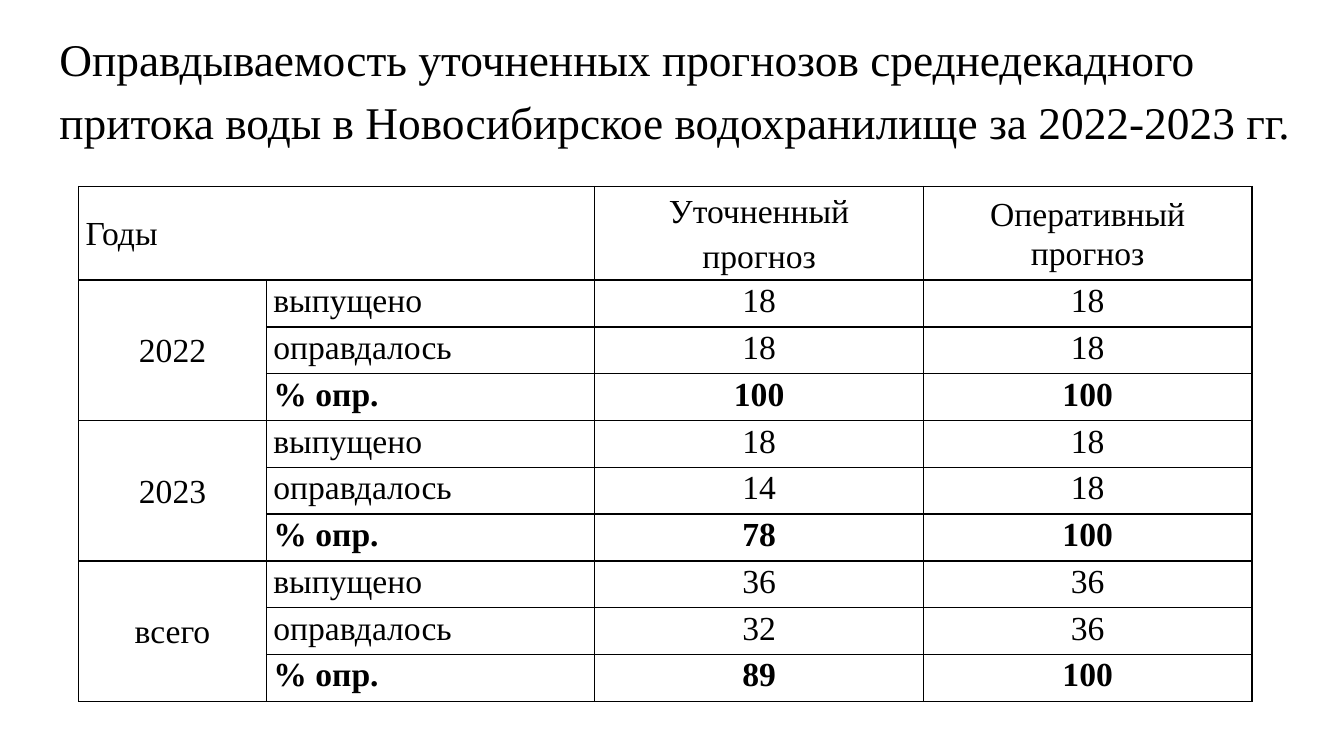
import dataclasses

import pptx
import pptx.dml.color
import pptx.enum.text
import pptx.oxml.ns
import pptx.util
from lxml import etree

ALIGN = pptx.enum.text.PP_ALIGN
ANCHOR = pptx.enum.text.MSO_ANCHOR
FONT = "Times New Roman"
BLACK = "000000"
WIDTH, HEIGHT = pptx.util.Inches(13.33), pptx.util.Inches(7.5)


@dataclasses.dataclass(frozen=True)
class Area:
    """A box in percent of the slide's size."""
    left: float
    top: float
    width: float
    height: float

    def emu(self) -> tuple[int, int, int, int]:
        return (int(WIDTH * self.left / 100), int(HEIGHT * self.top / 100),
                int(WIDTH * self.width / 100), int(HEIGHT * self.height / 100))


@dataclasses.dataclass(frozen=True)
class Period:
    """Issued and fulfilled forecasts with the success rate, per forecast kind."""
    name: str
    issued: tuple[int, int]
    fulfilled: tuple[int, int]
    percent: tuple[int, int]


TITLE = ("Оправдываемость уточненных прогнозов среднедекадного "
         "притока воды в Новосибирское водохранилище за 2022-2023 гг.")
TITLE_AREA = Area(3.68, 5.33, 95.42, 19.33)
TABLE_AREA = Area(5.85, 24.67, 87.3, 68.13)
COLUMN_SHARES = (0.16, 0.28, 0.28, 0.28)
HEADER_UNITS = 2
MEASURES = ("выпущено", "оправдалось", "% опр.")
PERIODS = (
    Period("2022", (18, 18), (18, 18), (100, 100)),
    Period("2023", (18, 18), (14, 18), (78, 100)),
    Period("всего", (36, 36), (32, 36), (89, 100)),
)
ROWS = 1 + len(PERIODS) * len(MEASURES)


def color(value: str) -> pptx.dml.color.RGBColor:
    return pptx.dml.color.RGBColor.from_string(value)


def style(p, size: float, spacing: float, align=ALIGN.LEFT, bold: bool = False) -> None:
    p.alignment = align
    p.line_spacing = spacing
    p.font.name = FONT
    p.font.size = pptx.util.Pt(size)
    p.font.bold = bold
    p.font.color.rgb = color(BLACK)


def border(cell, side: str, points: float) -> None:
    qn = pptx.oxml.ns.qn
    ln = etree.SubElement(cell._tc.get_or_add_tcPr(), qn(f"a:ln{side}"),
                          w=str(pptx.util.Pt(points)))
    fill = etree.SubElement(ln, qn("a:solidFill"))
    etree.SubElement(fill, qn("a:srgbClr"), val=BLACK)


def write(cell, text: str, align=ALIGN.CENTER, bold: bool = False, anchor=ANCHOR.TOP) -> None:
    cell.vertical_anchor = anchor
    cell.text = text
    for p in cell.text_frame.paragraphs:
        style(p, 24, 1.07, align, bold)
        p.space_before = p.space_after = pptx.util.Pt(2)


def add_title(s) -> None:
    tf = s.shapes.add_textbox(*TITLE_AREA.emu()).text_frame
    tf.word_wrap = True
    tf.vertical_anchor = ANCHOR.MIDDLE
    tf.margin_bottom = pptx.util.Inches(0.6)
    p = tf.paragraphs[0]
    p.text = TITLE
    style(p, 32.4, 1.15)


def format_grid(table) -> None:
    table.first_row = table.horz_banding = False
    _, _, width, height = TABLE_AREA.emu()
    unit = height / (ROWS - 1 + HEADER_UNITS)
    for column, share in zip(table.columns, COLUMN_SHARES):
        column.width = int(width * share)
    for i, row in enumerate(table.rows):
        row.height = int(unit * (1 if i else HEADER_UNITS))
        # Heavier rules separate the header and the periods
        top = 1.5 if i % len(MEASURES) == 1 else 1
        bottom = 1.5 if i % len(MEASURES) == 0 and i < ROWS - 1 else 1
        for cell in row.cells:
            cell.margin_left = cell.margin_right = pptx.util.Inches(0.07)
            cell.margin_top = cell.margin_bottom = 0
            for side, points in (("L", 1), ("R", 1), ("T", top), ("B", bottom)):
                border(cell, side, points)
            cell.fill.background()


def add_forecast_table(s) -> None:
    table = s.shapes.add_table(ROWS, len(COLUMN_SHARES), *TABLE_AREA.emu()).table
    format_grid(table)

    # Header
    table.cell(0, 0).merge(table.cell(0, 1))
    write(table.cell(0, 0), "Годы", ALIGN.LEFT, anchor=ANCHOR.MIDDLE)
    for col, text in enumerate(("Уточненный\nпрогноз", "Оперативный прогноз"), 2):
        write(table.cell(0, col), text, anchor=ANCHOR.MIDDLE)

    # One group of rows per period
    for i, period in enumerate(PERIODS):
        first = 1 + i * len(MEASURES)
        table.cell(first, 0).merge(table.cell(first + len(MEASURES) - 1, 0))
        write(table.cell(first, 0), period.name, anchor=ANCHOR.MIDDLE)
        values = (period.issued, period.fulfilled, period.percent)
        for row, (measure, pair) in enumerate(zip(MEASURES, values), first):
            bold = pair is values[-1] and measure == MEASURES[-1]
            write(table.cell(row, 1), measure, ALIGN.LEFT, bold)
            for col, value in enumerate(pair, 2):
                write(table.cell(row, col), str(value), bold=bold)


def main() -> None:
    prs = pptx.Presentation()
    prs.slide_width, prs.slide_height = WIDTH, HEIGHT
    s = prs.slides.add_slide(prs.slide_layouts[6])
    add_title(s)
    add_forecast_table(s)
    prs.save("out.pptx")


if __name__ == "__main__":
    main()
